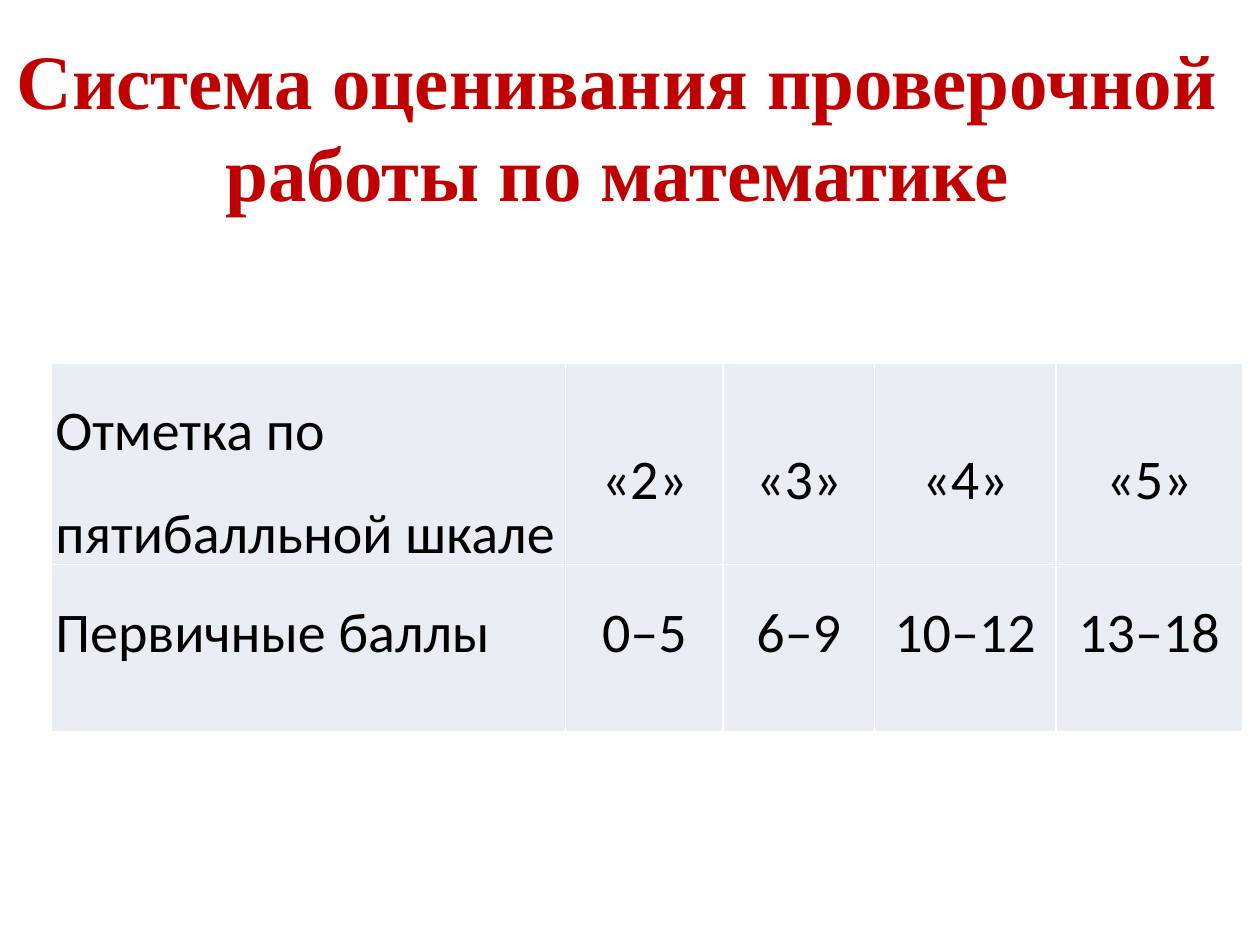
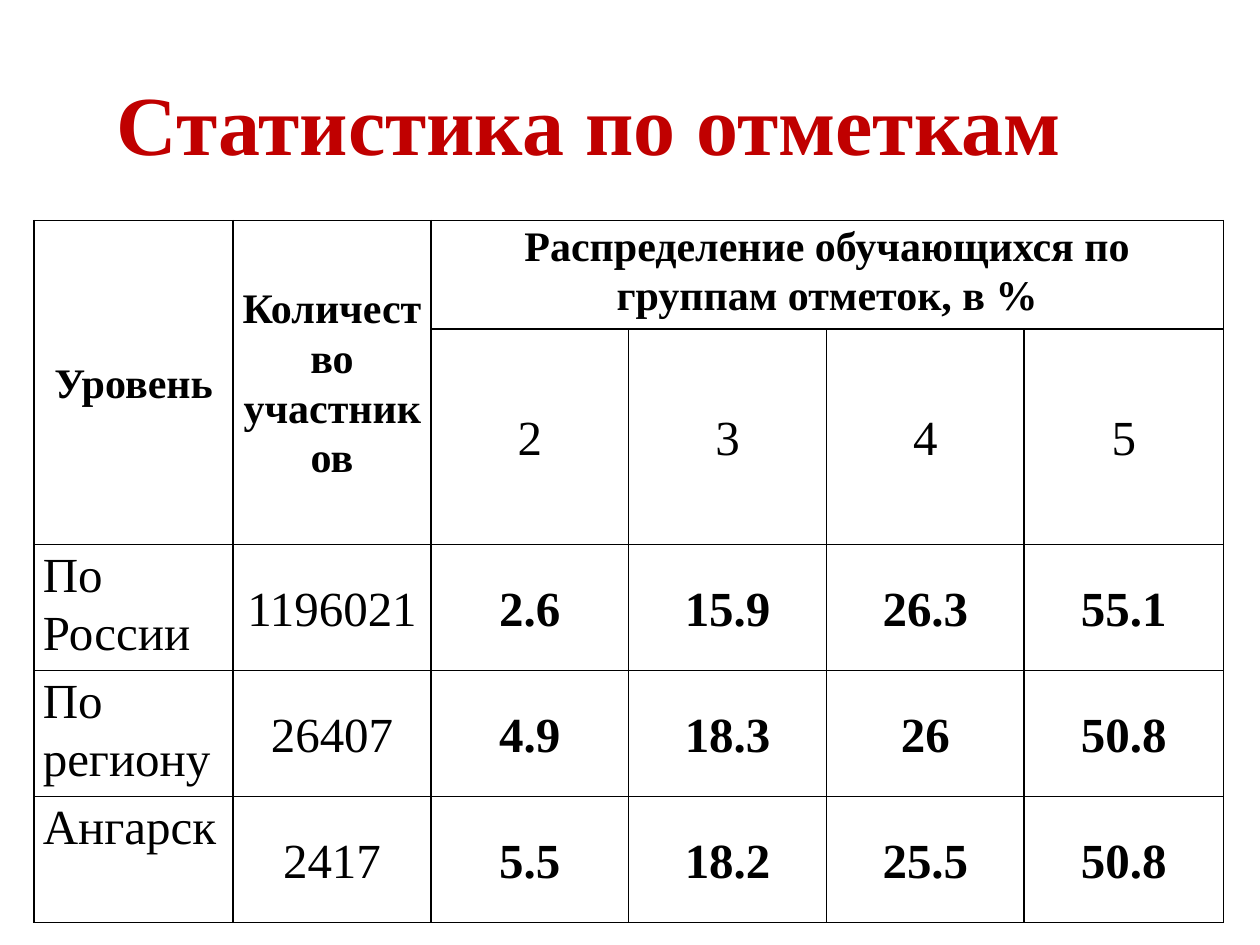
from lxml import etree
from pptx import Presentation
from pptx.dml.color import RGBColor
from pptx.enum.text import MSO_ANCHOR, PP_ALIGN
from pptx.oxml.ns import qn
from pptx.util import Inches, Pt

LEFT, CENTER, JUSTIFY = PP_ALIGN.LEFT, PP_ALIGN.CENTER, PP_ALIGN.JUSTIFY
TOP, MIDDLE = MSO_ANCHOR.TOP, MSO_ANCHOR.MIDDLE
RED, BLACK, WHITE, PALE = "C00000", "000000", "FFFFFF", "E9EDF4"
SERIF, SANS = "Times New Roman", "Calibri"


def write(frame, text, size, font=SERIF, color=BLACK, bold=False,
          align=CENTER, spacing=1.0, before=0):
    para = frame.paragraphs[0]
    para.text = text
    para.alignment = align
    para.line_spacing = spacing
    para.space_before = Pt(before)
    para.font.name = font
    para.font.size = Pt(size)
    para.font.bold = bold
    para.font.color.rgb = RGBColor.from_string(color)


def add_grid(page, left, top, widths, heights, line, margin, fill=None):
    """Add an empty table with 1 pt borders on every cell."""
    table = page.shapes.add_table(
        len(heights), len(widths), Inches(left), Inches(top),
        Inches(sum(widths)), Inches(sum(heights))).table
    table.first_row = table.horz_banding = False
    for column, width in zip(table.columns, widths):
        column.width = Inches(width)
    for row, height in zip(table.rows, heights):
        row.height = Inches(height)
    for cell in table.iter_cells():
        cell.margin_left = cell.margin_right = Inches(margin)
        cell.margin_top = cell.margin_bottom = 0
        if fill:
            cell.fill.solid()
            cell.fill.fore_color.rgb = RGBColor.from_string(fill)
        else:
            cell.fill.background()
        properties = cell._tc.get_or_add_tcPr()
        for position, side in enumerate(("a:lnL", "a:lnR", "a:lnT", "a:lnB")):
            border = etree.Element(qn(side), w=str(Pt(1)))
            solid = etree.SubElement(border, qn("a:solidFill"))
            etree.SubElement(solid, qn("a:srgbClr"), val=line)
            properties.insert(position, border)
    return table


deck = Presentation()
deck.slide_width, deck.slide_height = Inches(10), Inches(7.5)
blank = deck.slide_layouts[6]

# Titles
titles = [
    ("Система оценивания проверочной работы по математике",
     (-0.2, 0.21, 10.2, 1.58), 44, CENTER, True),
    ("Статистика по отметкам", (0.83, 0.52, 7.77, 0.91), 48, LEFT, False),
]
for text, place, size, align, wrap in titles:
    page = deck.slides.add_slide(blank)
    box = page.shapes.add_textbox(*map(Inches, place))
    box.text_frame.word_wrap = wrap
    write(box.text_frame, text, size, color=RED, bold=True, align=align)
scale_page, statistics_page = deck.slides

# Grading scale
scale = [
    ("Отметка по пятибалльной шкале", "«2»", "«3»", "«4»", "«5»"),
    ("Первичные баллы", "0–5", "6–9", "10–12", "13–18"),
]
table = add_grid(scale_page, 0.41, 2.88, [4.08, 1.25, 1.2, 1.44, 1.48],
                 [1.33] * 2, WHITE, 0.03, PALE)
row_styles = [(MIDDLE, LEFT), (TOP, JUSTIFY)]
for r, (values, (anchor, label_align)) in enumerate(zip(scale, row_styles)):
    for c, text in enumerate(values):
        cell = table.cell(r, c)
        cell.vertical_anchor = anchor
        write(cell.text_frame, text, 32, SANS, spacing=1.5,
              align=CENTER if c else label_align)

# Statistics by grade
table = add_grid(statistics_page, 0.27, 1.75, [1.58] + [1.57] * 4 + [1.58],
                 [0.86] * 2 + [1] * 3, BLACK, 0.07)
headings = [
    ("Уровень", 0, (1, 0), MIDDLE),
    ("Количество участников", 1, (1, 1), MIDDLE),
    ("Распределение обучающихся по группам отметок, в %", 2, (0, 5), TOP),
]
for text, column, last, anchor in headings:
    cell = table.cell(0, column)
    cell.merge(table.cell(*last))
    cell.vertical_anchor = anchor
    write(cell.text_frame, text, 24, bold=True, spacing=1.07)

for column, grade in enumerate("2345", start=2):
    cell = table.cell(1, column)
    cell.vertical_anchor = MIDDLE
    write(cell.text_frame, grade, 28, spacing=1.07, before=0.6)

statistics = [
    ("По России", "1196021", "2.6", "15.9", "26.3", "55.1"),
    ("По региону", "26407", "4.9", "18.3", "26", "50.8"),
    ("Ангарск", "2417", "5.5", "18.2", "25.5", "50.8"),
]
for r, values in enumerate(statistics, start=2):
    for c, text in enumerate(values):
        cell = table.cell(r, c)
        cell.vertical_anchor = MIDDLE if c else TOP
        write(cell.text_frame, text, 28, bold=c > 1, spacing=1.07,
              align=CENTER if c else LEFT, before=0.6 if c else 0)

deck.save("out.pptx")
